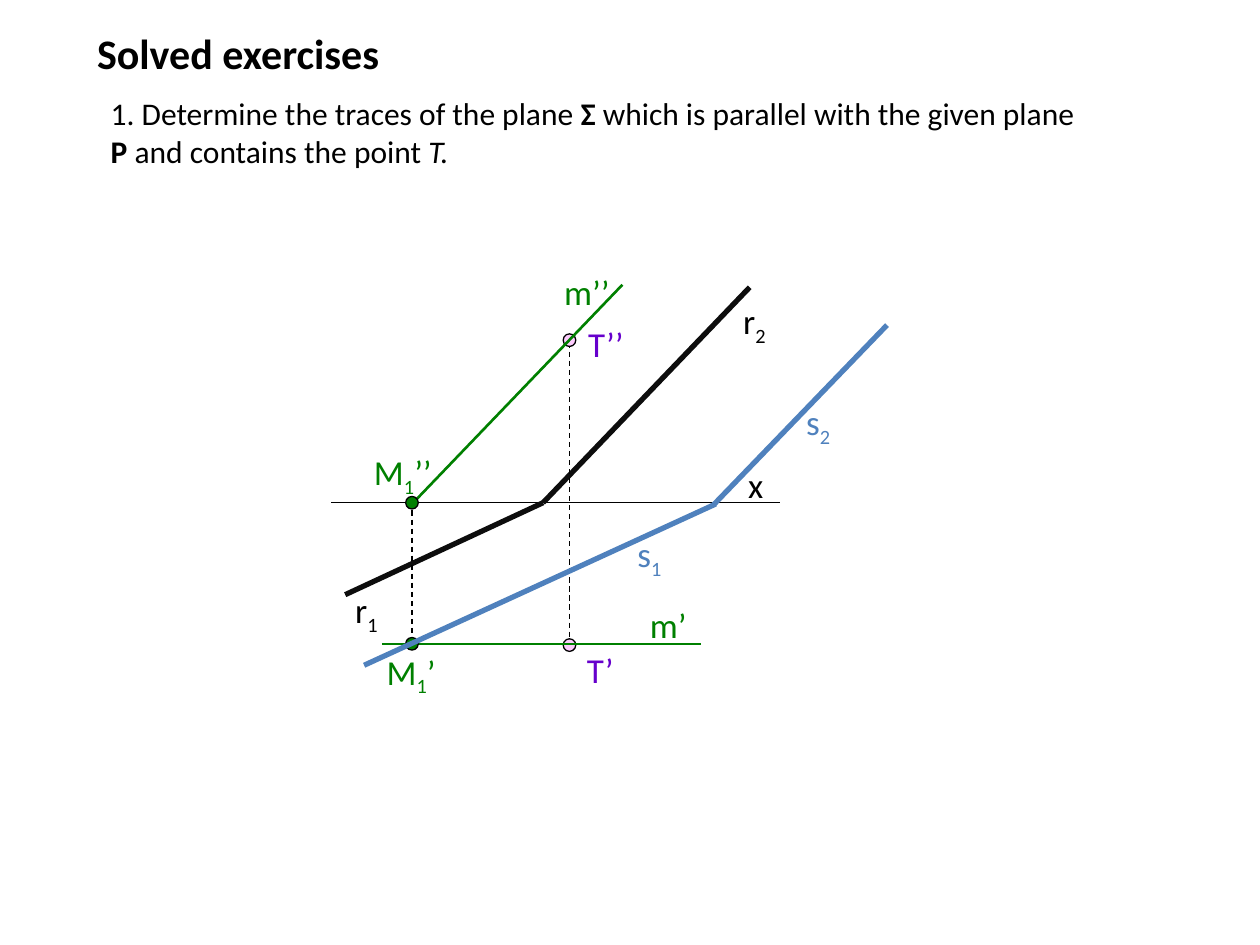
from dataclasses import dataclass

from pptx import Presentation
from pptx.dml.color import RGBColor
from pptx.enum.dml import MSO_LINE
from pptx.enum.shapes import MSO_CONNECTOR, MSO_SHAPE
from pptx.enum.text import MSO_ANCHOR, PP_ALIGN
from pptx.oxml.ns import qn
from pptx.util import Inches, Pt
from lxml import etree

STRAIGHT = MSO_CONNECTOR.STRAIGHT
OVAL = MSO_SHAPE.OVAL
DASH = MSO_LINE.DASH
TOP = MSO_ANCHOR.TOP
LEFT = PP_ALIGN.LEFT


@dataclass(frozen=True)
class Theme:
    font: str = "Calibri"
    black: str = "000000"
    trace: str = "0D0D0D"
    green: str = "008000"
    blue: str = "4F81BD"
    purple: str = "6600CC"
    pink: str = "FFCCFF"
    title: int = 24
    body: int = 18
    label: int = 20
    thin: float = 0.75
    medium: float = 1.5
    thick: float = 3
    dot: float = 0.1
    label_height: float = 0.44


def write(tf, runs, font, size, color, bold=False):
    """Fill a text frame with (text, style) runs: b bold, i italic, _ subscript."""
    tf.word_wrap = True
    tf.vertical_anchor = TOP
    p = tf.paragraphs[0]
    p.alignment = LEFT
    for text, style in runs:
        r = p.add_run()
        r.text = text
        r.font.name = font
        r.font.size = Pt(size)
        r.font.color.rgb = RGBColor.from_string(color)
        r.font.bold = bold or "b" in style
        r.font.italic = "i" in style
        if "_" in style:
            r.font._element.set("baseline", "-25000")


class Drawing:
    def __init__(self, slide, theme):
        self.s = slide
        self.t = theme

    def title(self, text, x, y, w, h):
        sp = self.s.shapes.title
        sp.left, sp.top, sp.width, sp.height = map(Inches, (x, y, w, h))
        write(sp.text_frame, [(text, "")], self.t.font, self.t.title,
              self.t.black, bold=True)

    def text(self, runs, x, y, w, h, size, color):
        sp = self.s.shapes.add_textbox(*map(Inches, (x, y, w, h)))
        write(sp.text_frame, runs, self.t.font, size, color)

    def label(self, name, x, y, w, color, sub="", primes=""):
        parts = [(name, ""), (sub, "_"), (primes, "")]
        self.text([part for part in parts if part[0]], x, y, w,
                  self.t.label_height, self.t.label, color)

    def line(self, start, end, color, width, dash=None):
        c = self.s.shapes.add_connector(STRAIGHT, *map(Inches, (*start, *end)))
        c.line.color.rgb = RGBColor.from_string(color)
        c.line.width = Pt(width)
        if dash:
            c.line.dash_style = dash
        etree.SubElement(c._element.spPr, qn("a:effectLst"))

    def point(self, x, y, color):
        d = self.t.dot
        sp = self.s.shapes.add_shape(
            OVAL, *map(Inches, (x - d / 2, y - d / 2, d, d)))
        sp.shadow.inherit = False
        sp.fill.solid()
        sp.fill.fore_color.rgb = RGBColor.from_string(color)
        sp.line.color.rgb = RGBColor.from_string(self.t.black)
        sp.line.width = Pt(self.t.thin)


def main():
    t = Theme()
    prs = Presentation()
    prs.slide_width, prs.slide_height = Inches(10), Inches(7.5)
    d = Drawing(prs.slides.add_slide(prs.slide_layouts[5]), t)

    # Heading and exercise
    d.title("Solved exercises", 0.67, 0.17, 5, 0.67)
    d.text([("1. Determine the traces of the plane ", ""), ("Σ ", "b"),
            ("which is parallel with the given plane ", ""), ("P ", "b"),
            ("and contains the point ", ""), ("T.", "i")],
           0.78, 0.7, 7.89, 0.71, t.body, t.black)

    # Axis x and traces of the given plane
    axis_y = 3.99
    vertex = (4.31, axis_y)
    d.line((2.63, axis_y), (6.19, axis_y), t.black, t.thin)
    d.line((5.95, 2.28), vertex, t.trace, t.thick)
    d.line(vertex, (2.74, 4.72), t.trace, t.thick)
    d.label("r", 2.72, 4.62, 0.6, t.black, sub="1")
    d.label("r", 5.8, 2.33, 0.57, t.black, sub="2")
    d.label("x", 5.84, 3.63, 0.4, t.black)

    # Point T in both projections
    t_x = 4.52
    d.line((t_x, 2.72), (t_x, 5.06), t.black, t.thin, DASH)
    for y in (2.7, 5.12):
        d.point(t_x, y, t.pink)
    d.label("T", 4.57, 2.51, 0.6, t.purple, primes="’’")
    d.label("T", 4.56, 5.1, 0.53, t.purple, primes="’")

    # Line m through T
    m_x = 3.27
    d.line((4.94, 2.26), (m_x, 4), t.green, t.medium)
    d.line((3.03, 5.11), (5.56, 5.11), t.green, t.medium)
    d.label("m", 4.38, 2.1, 0.63, t.green, primes="’’")
    d.label("m", 5.06, 4.74, 0.53, t.green, primes="’")

    # Trace point M1 of line m
    d.line((m_x, 3.98), (m_x, 5.12), t.black, t.thin, DASH)
    for y in (5.11, axis_y):
        d.point(m_x, y, t.green)
    d.label("M", 2.97, 5.11, 0.63, t.green, sub="1", primes="’")
    d.label("M", 2.87, 3.53, 0.76, t.green, sub="1", primes="’’")

    # Traces of the parallel plane
    d.line((2.89, 5.28), (5.68, 4), t.blue, t.thick)
    d.label("s", 4.96, 4.18, 0.47, t.blue, sub="1")
    d.label("s", 6.3, 3.13, 0.41, t.blue, sub="2")
    d.line((7.04, 2.58), (5.66, 4.01), t.blue, t.thick)

    prs.save("out.pptx")


if __name__ == "__main__":
    main()
